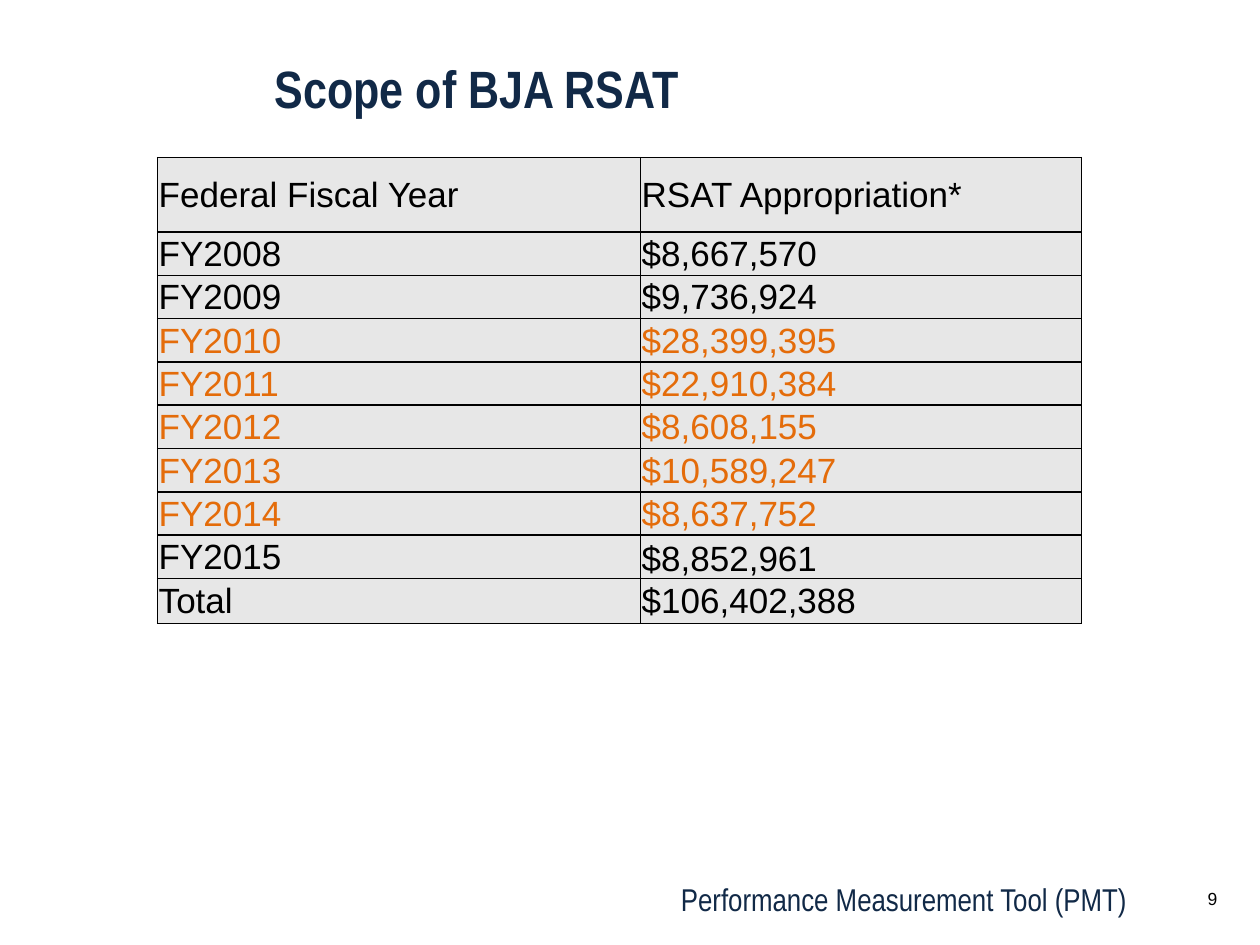
from dataclasses import dataclass

from lxml.etree import SubElement
from pptx import Presentation
from pptx.dml.color import RGBColor as RGB
from pptx.enum.text import MSO_ANCHOR as Anchor, PP_ALIGN as Align
from pptx.oxml.ns import qn
from pptx.util import Inches, Pt

COLS, ROWS = 120, 90
HEADERS = ("Federal Fiscal Year", "RSAT Appropriation*")
FIRST_YEAR = 2008
AMOUNTS = (8667570, 9736924, 28399395, 22910384, 8608155, 10589247, 8637752, 8852961)
HIGHLIGHTED = range(2010, 2015)


@dataclass(frozen=True)
class Theme:
    """Colours, fonts and type sizes of the slide."""
    navy: RGB = RGB.from_string("112947")
    orange: RGB = RGB.from_string("E46C0A")
    black: RGB = RGB.from_string("000000")
    grey: RGB = RGB.from_string("E7E7E7")
    heading_font: str = "Arial Narrow"
    body_font: str = "Arial"
    title_size: Pt = Pt(30)
    table_size: Pt = Pt(20)
    footer_size: Pt = Pt(18)
    number_size: Pt = Pt(10)
    border: Pt = Pt(1)


THEME = Theme()


def grid(prs, x, y, w, h):
    """Turn grid columns and rows into slide lengths."""
    dx, dy = prs.slide_width / COLS, prs.slide_height / ROWS
    return round(x * dx), round(y * dy), round(w * dx), round(h * dy)


def apply(target, values):
    """Set each attribute of target from a dict."""
    for name, value in values.items():
        setattr(target, name, value)


def write(tf, text, color, font, align=Align.LEFT, line=None):
    """Write one formatted paragraph into a text frame."""
    p = tf.paragraphs[0]
    apply(p, {"alignment": align, "line_spacing": line})
    r = p.add_run()
    r.text = text
    apply(r.font, font)
    r.font.color.rgb = color


def add_text(prs, s, box, text, color, font, anchor=Anchor.TOP, **layout):
    """Add a wrapped text box on the grid."""
    tf = s.shapes.add_textbox(*grid(prs, *box)).text_frame
    apply(tf, {"word_wrap": True, "vertical_anchor": anchor})
    write(tf, text, color, font, **layout)


def add_borders(cell):
    """Draw a thin line on every side of a cell."""
    tc_pr = cell._tc.get_or_add_tcPr()
    for i, side in enumerate(("lnL", "lnR", "lnT", "lnB")):
        ln = SubElement(tc_pr, qn(f"a:{side}"), w=str(THEME.border))
        SubElement(SubElement(ln, qn("a:solidFill")), qn("a:srgbClr"), val=str(THEME.black))
        tc_pr.remove(ln)
        tc_pr.insert(i, ln)


def fill_cell(cell, text, color):
    """Fill, frame and label one table cell."""
    inset = Inches(0.01)
    apply(cell, {"margin_left": inset, "margin_right": inset, "margin_top": inset,
                 "margin_bottom": 0, "vertical_anchor": Anchor.MIDDLE})
    cell.fill.solid()
    cell.fill.fore_color.rgb = THEME.grey
    add_borders(cell)
    write(cell.text_frame, text, color, {"name": THEME.body_font, "size": THEME.table_size})


def table_rows():
    """List each row's texts and colour, ending with the total."""
    rows = [(HEADERS, THEME.black)]
    for year, amount in enumerate(AMOUNTS, FIRST_YEAR):
        color = THEME.orange if year in HIGHLIGHTED else THEME.black
        rows.append(((f"FY{year}", f"${amount:,}"), color))
    return rows + [(("Total", f"${sum(AMOUNTS):,}"), THEME.black)]


def add_funding_table(prs, s, x, y, widths, heights):
    """Add the appropriations table."""
    rows = table_rows()
    box = grid(prs, x, y, sum(widths), sum(heights))
    table = s.shapes.add_table(len(rows), len(widths), *box).table
    apply(table, {"first_row": False, "horz_banding": False})
    for column, width in zip(table.columns, widths):
        column.width = grid(prs, 0, 0, width, 0)[2]
    for row, height, (texts, color) in zip(table.rows, heights, rows):
        row.height = grid(prs, 0, 0, 0, height)[3]
        for cell, text in zip(row.cells, texts):
            fill_cell(cell, text, color)
    table.cell(len(AMOUNTS), 1).vertical_anchor = Anchor.BOTTOM


def main():
    """Build and save the slide."""
    prs = Presentation()
    apply(prs, {"slide_width": Inches(10), "slide_height": Inches(7.5)})
    s = prs.slides.add_slide(prs.slide_layouts[6])
    add_text(prs, s, (50, 83.2, 58.5, 4.8), "Performance Measurement Tool (PMT)", THEME.navy,
             {"name": THEME.heading_font, "size": THEME.footer_size}, align=Align.RIGHT)
    add_text(prs, s, (25, 5.9, 85, 6), "Scope of BJA RSAT", THEME.navy,
             {"name": THEME.heading_font, "size": THEME.title_size, "bold": True},
             anchor=Anchor.BOTTOM, line=Pt(31))
    heights = [7.1] + [4.1] * len(AMOUNTS) + [4.3]
    add_funding_table(prs, s, 15, 15, (46, 42), heights)
    add_text(prs, s, (112.7, 84, 4.4, 3.2), "9", THEME.black,
             {"name": THEME.body_font, "size": THEME.number_size}, align=Align.RIGHT)
    prs.save("out.pptx")


if __name__ == "__main__":
    main()
